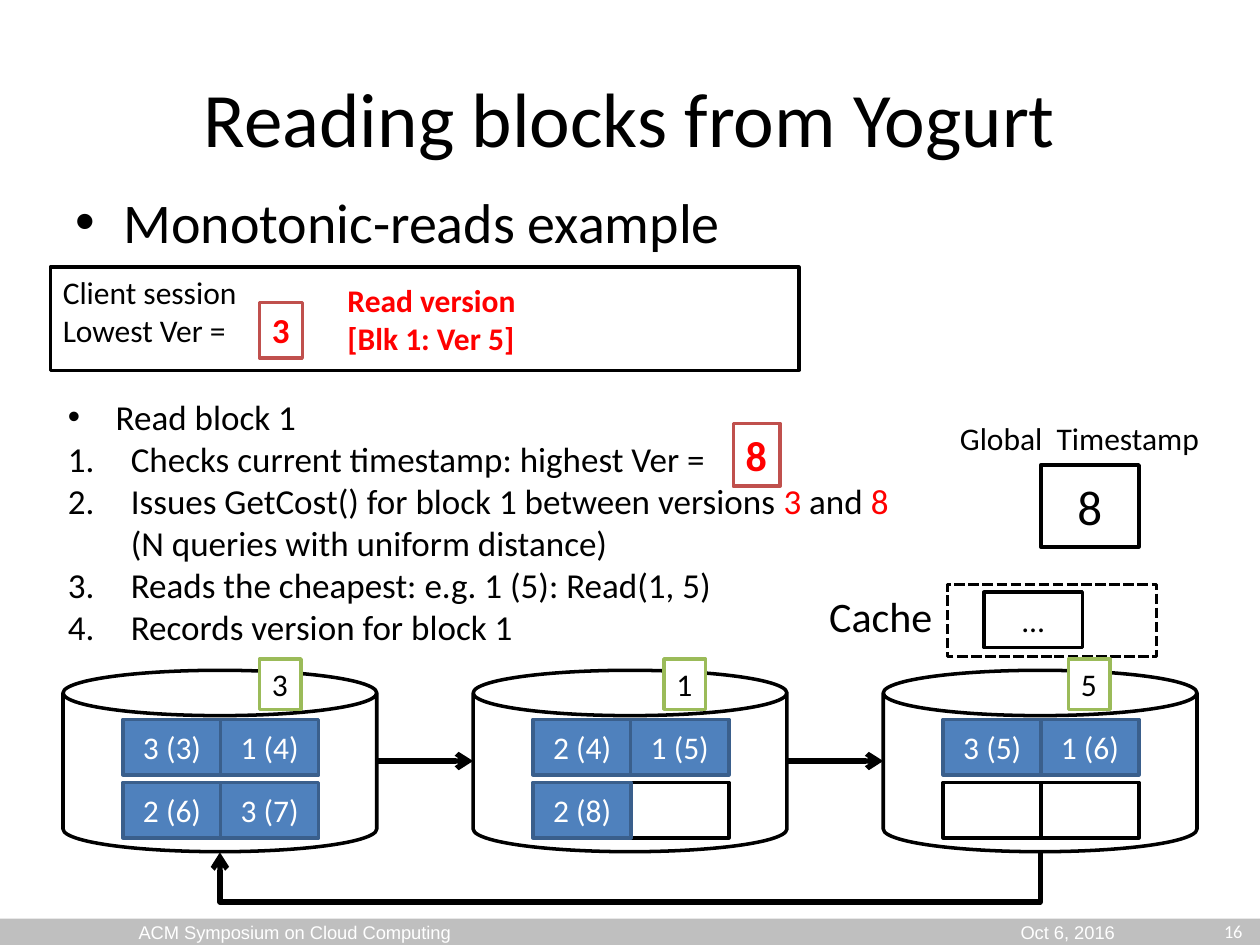
"""Build the slide on reading blocks with monotonic reads."""
from dataclasses import dataclass

from lxml.etree import SubElement
from pptx import Presentation
from pptx.dml.color import RGBColor
from pptx.enum.dml import MSO_LINE as Dash
from pptx.enum.shapes import MSO_CONNECTOR as Link, MSO_SHAPE as Kind
from pptx.enum.text import MSO_ANCHOR as Anchor, PP_ALIGN as Align
from pptx.oxml.ns import qn
from pptx.util import Emu, Inches, Pt

BLACK, WHITE, RED, GREEN = "000000", "FFFFFF", "FF0000", "9BBB59"
BLUE, NAVY, BRICK, GRAY = "4F81BD", "3A5F8C", "C0504D", "BFBFBF"


@dataclass
class Box:
    left: float
    top: float
    width: float
    height: float
    text: str = ""
    size: float = 18
    color: str = BLACK
    fill: str | None = WHITE
    line: str | None = BLACK
    bold: bool = False
    wrap: bool = True
    align: Align = Align.CENTER
    anchor: Anchor = Anchor.MIDDLE
    font: str = "Calibri"
    kind: Kind = Kind.RECTANGLE


@dataclass
class Disk:
    tag: str
    cells: tuple[str, ...]


@dataclass
class Item:
    words: tuple[tuple[str, str], ...]
    mark: str = "buAutoNum"
    indent: float = 0.5


def paint(target, color: str) -> None:
    target.rgb = RGBColor.from_string(color)


def style(font, box: Box, color: str) -> None:
    font.name, font.size, font.bold = box.font, Pt(box.size), box.bold
    paint(font.color, color)


def draw(slide, box: Box):
    area = [Inches(v) for v in (box.left, box.top, box.width, box.height)]
    if box.fill or box.line:
        shape = slide.shapes.add_shape(box.kind, *area)
        shape.shadow.inherit = False
        if box.fill:
            shape.fill.solid()
            paint(shape.fill.fore_color, box.fill)
        if box.line:
            paint(shape.line.color, box.line)
            shape.line.width = Pt(2)
        else:
            shape.line.fill.background()
    else:
        shape = slide.shapes.add_textbox(*area)
    frame = shape.text_frame
    frame.word_wrap, frame.vertical_anchor = box.wrap, box.anchor
    if box.text:
        frame.text = box.text
        for para in frame.paragraphs:
            para.alignment = box.align
            for run in para.runs:
                style(run.font, box, box.color)
    return shape


def label(slide, *args, **opts):
    base = {"align": Align.LEFT, "anchor": Anchor.TOP}
    if len(args) < 8:
        base |= {"fill": None}
    if len(args) < 9:
        base |= {"line": None}
    return draw(slide, Box(*args, **(base | opts)))


def bullet(para, mark: str, indent: float) -> None:
    props = para._p.get_or_add_pPr()
    props.set("marL", str(Inches(indent)))
    props.set("indent", str(-Inches(indent)))
    SubElement(props, qn("a:buFont")).set("typeface", "Arial" if mark == "buChar" else "+mj-lt")
    sign = SubElement(props, qn(f"a:{mark}"))
    if mark == "buChar":
        sign.set("char", "•")
    else:
        sign.set("type", "arabicPeriod")


def arrow(slide, kind: Link, start: tuple[float, float], end: tuple[float, float]):
    wire = slide.shapes.add_connector(kind, *map(Inches, start + end))
    paint(wire.line.color, BLACK)
    wire.line.width = Pt(3)
    SubElement(wire.line._get_or_add_ln(), qn("a:tailEnd")).set("type", "arrow")
    SubElement(wire._element.spPr, qn("a:effectLst"))
    return wire


def loop(slide, start: float, end: float, top: float, drop: float) -> None:
    wire = arrow(slide, Link.ELBOW, (start, top), (end, top + 0.01))
    span, thin = Inches(start - end), Inches(0.01)
    wire.left = Emu(Inches((start + end) / 2) - thin // 2)
    wire.top = Emu(Inches(top) - span // 2)
    wire.width, wire.height = thin, span
    props = wire._element.spPr
    frame = props.find(qn("a:xfrm"))
    frame.set("rot", "5400000")
    frame.attrib.pop("flipH", None)
    shape = props.find(qn("a:prstGeom"))
    guides = shape.find(qn("a:avLst"))
    if guides is None:
        guides = SubElement(shape, qn("a:avLst"))
    guide = SubElement(guides, qn("a:gd"))
    guide.set("name", "adj1")
    guide.set("fmla", f"val {round(drop / 0.01 * 100000)}")


def steps(slide, items: list[Item]) -> None:
    box = Box(0.44, 3.09, 9.26, 2.12, size=20, line=None, anchor=Anchor.TOP)
    frame = draw(slide, box).text_frame
    for place, item in enumerate(items):
        para = frame.add_paragraph() if place else frame.paragraphs[0]
        para.alignment = Align.LEFT
        bullet(para, item.mark, item.indent)
        for text, color in item.words:
            if text.startswith("\n"):
                para.add_line_break()
            run = para.add_run()
            run.text = text.lstrip("\n")
            style(run.font, box, color)


def disks(slide, racks: list[Disk]) -> None:
    left, top, step, width, high = 0.5, 5.32, 3.255, 2.49, 1.44
    for place, rack in enumerate(racks):
        edge = left + place * step
        draw(slide, Box(edge, top, width, high, kind=Kind.CAN))
        if place:
            arrow(slide, Link.STRAIGHT, (edge - step + width, 6.04), (edge, 6.04))
        for spot, text in sorted(enumerate(rack.cells), key=lambda cell: bool(cell[1])):
            row, col = divmod(spot, 2)
            fill, line = (BLUE, NAVY) if text else (WHITE, BLACK)
            draw(slide, Box(edge + 0.475 + col * 0.775, 5.71 + row * 0.5, 0.78, 0.44,
                            text, color=WHITE, fill=fill, line=line))
        label(slide, 2.06 + place * 3.21, 5.23, 0.33, 0.4, rack.tag,
              fill=WHITE, line=GREEN, wrap=False)
    loop(slide, left + 2 * step + width / 2, left + width / 2, top + high, 0.41)


def footer(slide) -> None:
    bar = label(slide, 0, 7.29, 10, 0.21, "ACM Symposium on Cloud Computing\tOct 6, 2016",
                10.5, WHITE, fill=GRAY, font="Arial", anchor=Anchor.MIDDLE)
    bar.text_frame.margin_left = Inches(1.1)
    props = bar.text_frame.paragraphs[0]._p.get_or_add_pPr()
    stop = SubElement(SubElement(props, qn("a:tabLst")), qn("a:tab"))
    stop.set("pos", str(Inches(7)))
    stop.set("algn", "l")
    label(slide, 7.63, 7.19, 2.33, 0.4, "16", 10.5, WHITE,
          align=Align.RIGHT, anchor=Anchor.MIDDLE)


def main() -> None:
    deck = Presentation()
    deck.slide_width, deck.slide_height = Inches(10), Inches(7.5)
    slide = deck.slides.add_slide(deck.slide_layouts[6])
    footer(slide)
    label(slide, 0.5, 0.3, 9, 1.25, "Reading blocks from Yogurt", 44,
          align=Align.CENTER, anchor=Anchor.MIDDLE)
    topic = label(slide, 0.5, 1.44, 9, 0.65, "Monotonic-reads example", 32)
    bullet(topic.text_frame.paragraphs[0], "buChar", 0.38)
    label(slide, 0.4, 2.12, 5.94, 0.82, "Client session\nLowest Ver =", fill=WHITE, line=BLACK)
    label(slide, 2.06, 2.4, 0.34, 0.44, "3", 20, RED, WHITE, BRICK, True, False)
    label(slide, 2.66, 2.18, 1.56, 0.71, "Read version\n[Blk 1: Ver 5]",
          color=RED, bold=True, wrap=False)
    steps(slide, [
        Item((("Read block 1", BLACK),), "buChar", 0.38),
        Item((("Checks current timestamp: highest Ver =", BLACK),)),
        Item((("Issues GetCost() for block 1 between versions ", BLACK), ("3", RED),
              (" and ", BLACK), ("8 ", RED), ("\n(N queries with uniform distance)", BLACK))),
        Item((("Reads the cheapest: e.g. 1 (5): Read(1, 5)", BLACK),)),
        Item((("Records version for block 1", BLACK),)),
    ])
    label(slide, 5.82, 3.36, 0.37, 0.5, "8", 24, RED, WHITE, BRICK, True, False)
    cache = draw(slide, Box(7.52, 4.64, 1.66, 0.57))
    cache.line.dash_style = Dash.SQUARE_DOT
    label(slide, 6.34, 4.64, 1.3, 0.5, "Cache", 24, align=Align.CENTER)
    draw(slide, Box(7.81, 4.7, 0.78, 0.44, "…"))
    label(slide, 7.52, 3.28, 2.12, 0.4, "Global  Timestamp", wrap=False)
    draw(slide, Box(8.26, 3.69, 0.78, 0.65, "8", 28))
    disks(slide, [
        Disk("3", ("3 (3)", "1 (4)", "2 (6)", "3 (7)")),
        Disk("1", ("2 (4)", "1 (5)", "2 (8)", "")),
        Disk("5", ("3 (5)", "1 (6)", "", "")),
    ])
    deck.save("out.pptx")


if __name__ == "__main__":
    main()
